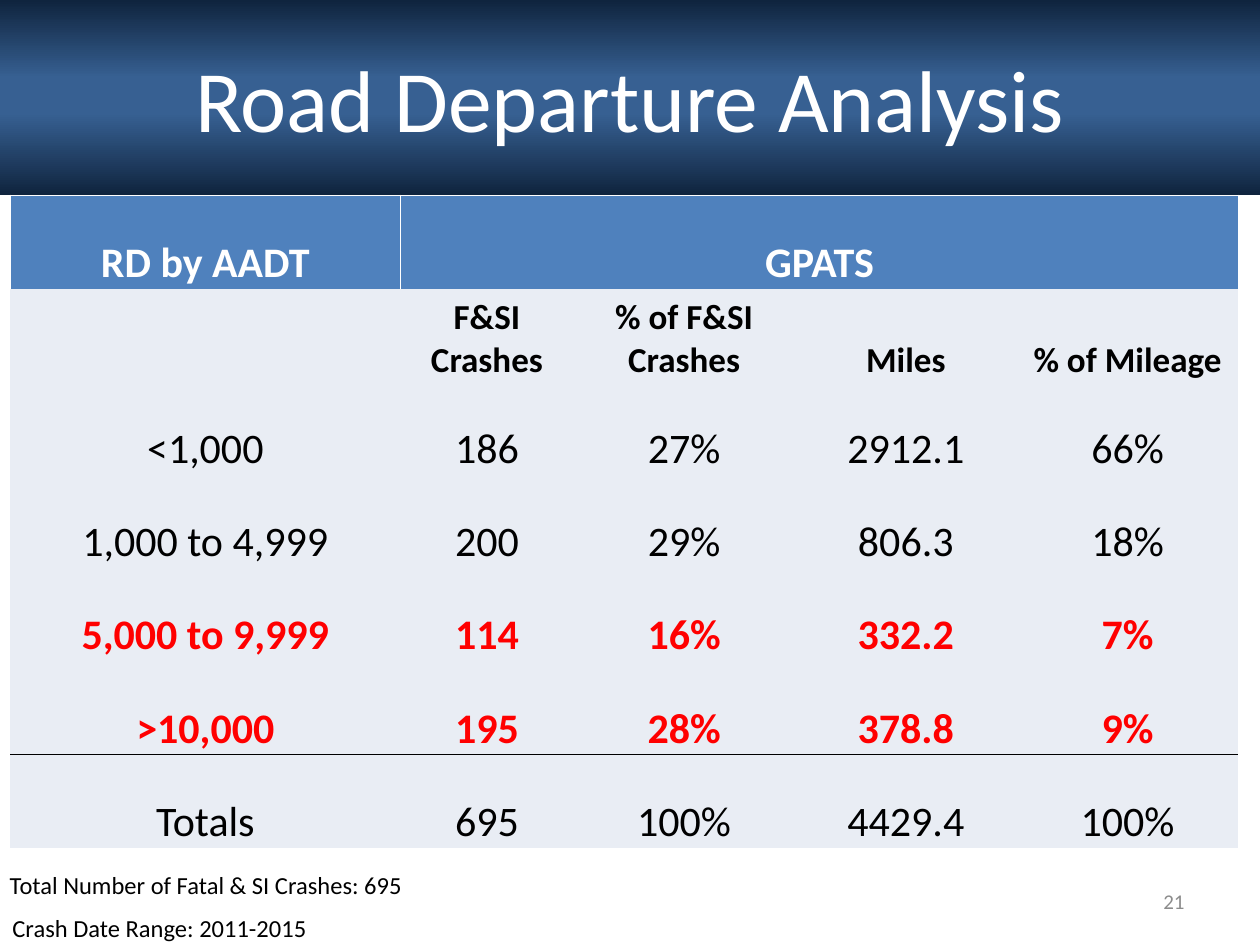
from lxml import etree
from pptx import Presentation
from pptx.dml.color import RGBColor
from pptx.enum import text
from pptx.oxml import ns, parse_xml
from pptx.util import Inches, Pt

TITLE = "Road Departure Analysis"
GRADIENT = [(0, "0F243E"), (40, "376092"), (58, "376092"), (100, "0F243E")]
ROWS = [
    ["RD by AADT", "GPATS", "", "", ""],
    ["", "F&SI Crashes", "% of F&SI Crashes", "Miles", "% of Mileage"],
    ["<1,000", "186", "27%", "2912.1", "66%"],
    ["1,000 to 4,999", "200", "29%", "806.3", "18%"],
    ["5,000 to 9,999", "114", "16%", "332.2", "7%"],
    [">10,000", "195", "28%", "378.8", "9%"],
    ["Totals", "695", "100%", "4429.4", "100%"],
]
COL_WIDTHS = [3.1, 1.37, 1.76, 1.76, 1.76]
ROW_HEIGHT = 0.74
HEADER, LABELS, TOTALS = 0, 1, len(ROWS) - 1
HIGHLIGHTED = (4, 5)
LEFT, CENTER, RIGHT = text.PP_ALIGN.LEFT, text.PP_ALIGN.CENTER, text.PP_ALIGN.RIGHT
TOP, MIDDLE = text.MSO_ANCHOR.TOP, text.MSO_ANCHOR.MIDDLE
NOTES = [
    ("21", (7.17, 6.95, 2.33, 0.4), 12, "8C8C8C", RIGHT, MIDDLE),
    ("Crash Date Range: 2011-2015", (0, 7.2, 2.75, 0.34), 14, "000000", LEFT, TOP),
    ("Total Number of Fatal & SI Crashes: 695", (-0.03, 6.86, 3.33, 0.34), 14,
     "000000", CENTER, TOP),
]
NO_STYLE = "{2D5ABB26-0587-4C30-8999-92F81FD0307C}"


def rgb(value):
    return RGBColor.from_string(value)


def write(tf, content, size=24, color="000000", bold=False, align=CENTER):
    p = tf.paragraphs[0]
    p.alignment = align
    r = p.add_run()
    r.text = content
    r.font.name, r.font.size, r.font.bold = "Calibri", Pt(size), bold
    r.font.color.rgb = rgb(color)


def place(sp, box):
    sp.left, sp.top, sp.width, sp.height = map(Inches, box)


def fill_gradient(sp, stops):
    gradient = "".join(
        f'<a:gs pos="{pos * 1000}"><a:srgbClr val="{color}"/></a:gs>' for pos, color in stops)
    sp._element.spPr.append(parse_xml(
        f'<a:gradFill {ns.nsdecls("a")} rotWithShape="1"><a:gsLst>{gradient}</a:gsLst>'
        '<a:lin ang="5400000" scaled="0"/></a:gradFill>'))


def add_borders(cell, sides, color):
    tcPr = cell._tc.get_or_add_tcPr()
    for side in sides:
        ln = etree.SubElement(tcPr, ns.qn(f"a:ln{side}"), w=str(Pt(1)))
        solid = etree.SubElement(ln, ns.qn("a:solidFill"))
        etree.SubElement(solid, ns.qn("a:srgbClr"), val=color)


def add_crash_table(s):
    frame = s.shapes.add_table(
        len(ROWS), len(COL_WIDTHS), Inches(0.08), Inches(1.55),
        Inches(sum(COL_WIDTHS)), Inches(ROW_HEIGHT * len(ROWS)))
    table = frame.table
    table._tbl.tblPr.find(ns.qn("a:tableStyleId")).text = NO_STYLE
    for col, width in zip(table.columns, COL_WIDTHS):
        col.width = Inches(width)
    for i, row in enumerate(ROWS):
        table.rows[i].height = Inches(ROW_HEIGHT)
        color = "FFFFFF" if i == HEADER else "FF0000" if i in HIGHLIGHTED else "000000"
        for j, content in enumerate(row):
            cell = table.cell(i, j)
            cell.margin_left = cell.margin_right = cell.margin_top = cell.margin_bottom = 0
            cell.vertical_anchor = text.MSO_ANCHOR.BOTTOM
            if i == HEADER:
                add_borders(cell, "LRT", "FFFFFF")
            elif i == TOTALS - 1:
                add_borders(cell, "B", "000000")
            elif i == TOTALS:
                add_borders(cell, "T", "000000")
            cell.fill.solid()
            cell.fill.fore_color.rgb = rgb("4F81BD" if i == HEADER else "E9EDF4")
            if content:
                write(cell.text_frame, content, size=20 if i == LABELS else 24, color=color,
                      bold=i in (HEADER, LABELS, *HIGHLIGHTED))
    table.cell(HEADER, 1).merge(table.cell(HEADER, len(COL_WIDTHS) - 1))


def main():
    prs = Presentation()
    prs.slide_width, prs.slide_height = Inches(10), Inches(7.5)
    s = prs.slides.add_slide(prs.slide_layouts[5])

    title = s.shapes.title
    place(title, (0, 0, 10, 1.55))
    fill_gradient(title, GRADIENT)
    title.text_frame.auto_size = text.MSO_AUTO_SIZE.NONE
    title.text_frame.vertical_anchor = MIDDLE
    write(title.text_frame, TITLE, size=50, color="FFFFFF")

    add_crash_table(s)
    for content, box, size, color, align, anchor in NOTES:
        tf = s.shapes.add_textbox(*map(Inches, box)).text_frame
        tf.word_wrap = True
        tf.vertical_anchor = anchor
        write(tf, content, size=size, color=color, align=align)
    prs.save("out.pptx")


if __name__ == "__main__":
    main()
